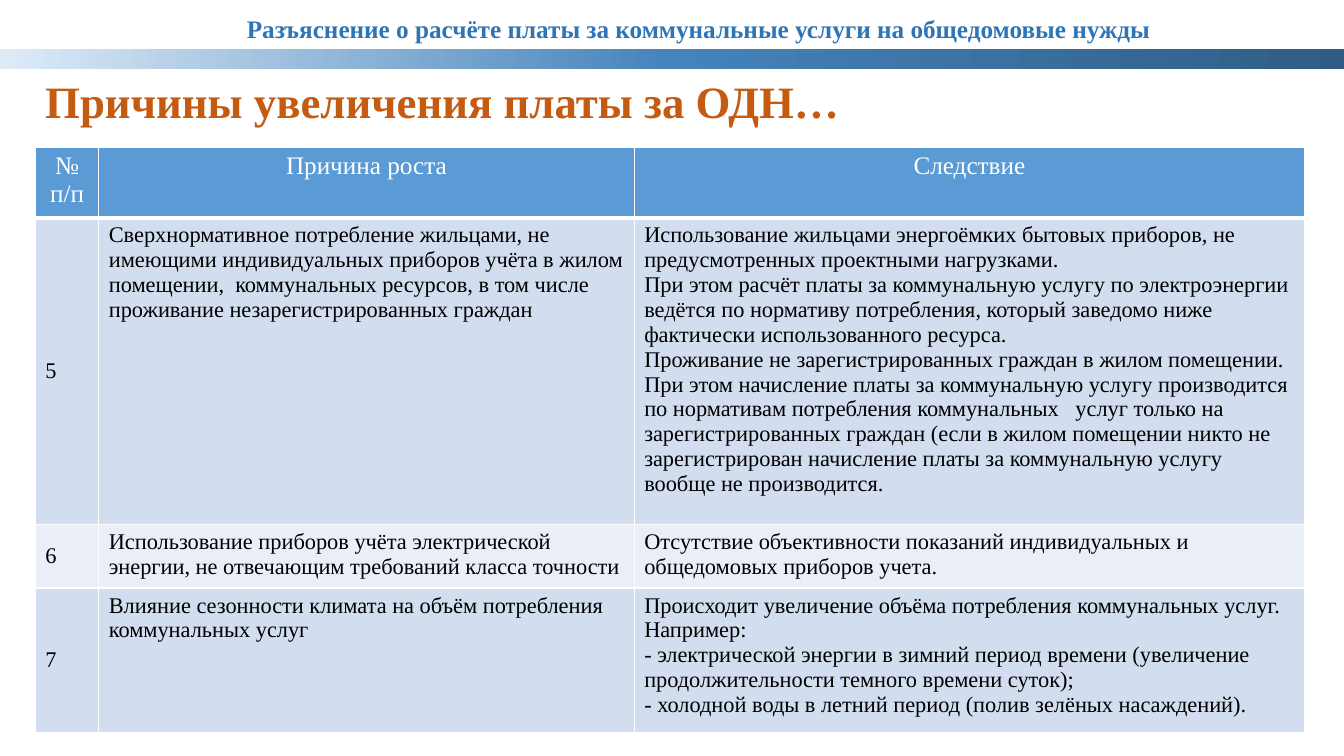
"""Builds the slide on why communal utility charges grow."""
from copy import deepcopy
from lxml.etree import SubElement as Sub
from pptx import Presentation
from pptx.dml.color import RGBColor as Rgb
from pptx.enum.shapes import MSO_SHAPE as Shape
from pptx.enum.text import MSO_ANCHOR as Anchor, MSO_AUTO_SIZE as Auto, PP_ALIGN as Align
from pptx.oxml.ns import qn
from pptx.util import Inches, Pt

FONT = "Times New Roman"
HEX = {"topic": "2E75B6", "title": "C55A11", "head": "5B9BD5", "odd": "D2DEEF",
       "even": "EAEFF7", "white": "FFFFFF", "black": "000000"}
BAR = [(0, "305C84"), (0.5, "4583BB"), (1, "DEEBF7")]
TOPIC = "Разъяснение о расчёте платы за коммунальные услуги на общедомовые нужды"
TITLE = "Причины увеличения платы за ОДН…"
COLS = [0.63, 5.31, 6.65]
HIGH = [0.69, 3.04, 0.63, 1.43]
ROWS = [
    (["№", "п/п"], ["Причина роста"], ["Следствие"]),
    (["5"],
     ["Сверхнормативное потребление жильцами, не имеющими индивидуальных приборов учёта "
      "в жилом помещении,  коммунальных ресурсов, в том числе проживание "
      "незарегистрированных граждан"],
     ["Использование жильцами энергоёмких бытовых приборов, не предусмотренных "
      "проектными нагрузками.",
      "При этом расчёт платы за коммунальную услугу по электроэнергии ведётся по нормативу "
      "потребления, который заведомо ниже фактически использованного ресурса.",
      "Проживание не зарегистрированных граждан в жилом помещении.",
      "При этом начисление платы за коммунальную услугу производится по нормативам "
      "потребления коммунальных   услуг только на зарегистрированных граждан (если в жилом "
      "помещении никто не зарегистрирован начисление платы за коммунальную услугу вообще "
      "не производится."]),
    (["6"],
     ["Использование приборов учёта электрической энергии, не отвечающим требований "
      "класса точности"],
     ["Отсутствие объективности показаний индивидуальных и общедомовых приборов учета."]),
    (["7"],
     ["Влияние сезонности климата на объём потребления  коммунальных услуг"],
     ["Происходит увеличение объёма потребления коммунальных услуг. Например:",
      "- электрической энергии в зимний период времени (увеличение продолжительности "
      "темного времени суток);",
      "- холодной воды в летний период (полив зелёных насаждений)."]),
]


def write(frame, lines, size, tint, bold=False, align=Align.LEFT):
    frame.text = "\n".join(lines)
    for para in frame.paragraphs:
        para.alignment = align
        font = para.font
        font.name, font.size, font.bold = FONT, Pt(size), bold
        font.color.rgb = Rgb.from_string(HEX[tint])


def label(slide, box, text, size, tint, wrap):
    frame = slide.shapes.add_textbox(*map(Inches, box)).text_frame
    write(frame, [text], size, tint, True)
    frame.word_wrap = wrap
    frame.auto_size = Auto.SHAPE_TO_FIT_TEXT if not wrap else Auto.NONE


def draw_bar(slide):
    bar = slide.shapes.add_shape(Shape.RECTANGLE, *map(Inches, (0, 0.49, 13.33, 0.19)))
    bar.shadow.inherit = False
    bar.line.fill.background()
    bar.fill.gradient()
    bar.fill.gradient_angle = 180
    first = bar._element.spPr.find(".//" + qn("a:gs"))
    first.addnext(deepcopy(first))
    for stop, (place, tint) in zip(bar.fill.gradient_stops, BAR):
        stop.position = place
        stop.color.rgb = Rgb.from_string(tint)


def edge(cell, row):
    props = cell._tc.get_or_add_tcPr()
    thick = {0: "B", 1: "T"}.get(row)
    for spot, side in enumerate("LRTB"):
        line = Sub(props, qn("a:ln" + side), w=str(Pt(3 if side == thick else 1)))
        Sub(Sub(line, qn("a:solidFill")), qn("a:srgbClr"), val=HEX["white"])
        props.insert(spot, line)


def draw_table(slide):
    box = map(Inches, (0.35, 1.46, sum(COLS), sum(HIGH)))
    table = slide.shapes.add_table(len(ROWS), len(COLS), *box).table
    for col, width in zip(table.columns, COLS):
        col.width = Inches(width)
    for row, cells in enumerate(ROWS):
        table.rows[row].height = Inches(HIGH[row])
        for col, lines in enumerate(cells):
            cell = table.cell(row, col)
            if row == 0:
                write(cell.text_frame, lines, 18, "white", align=Align.CENTER)
            else:
                write(cell.text_frame, lines, 16, "black")
            if row and col == 0:
                cell.vertical_anchor = Anchor.MIDDLE
            cell.fill.solid()
            shade = "head" if row == 0 else "odd" if row % 2 else "even"
            cell.fill.fore_color.rgb = Rgb.from_string(HEX[shade])
            edge(cell, row)


def main():
    deck = Presentation()
    deck.slide_width, deck.slide_height = Inches(13.33), Inches(7.5)
    slide = deck.slides.add_slide(deck.slide_layouts[6])
    draw_bar(slide)
    label(slide, (2.35, 0.08, 9.25, 0.4), TOPIC, 18, "topic", False)
    label(slide, (0.35, 0.68, 9.58, 0.94), TITLE, 32, "title", True)
    draw_table(slide)
    deck.save("out.pptx")


if __name__ == "__main__":
    main()
